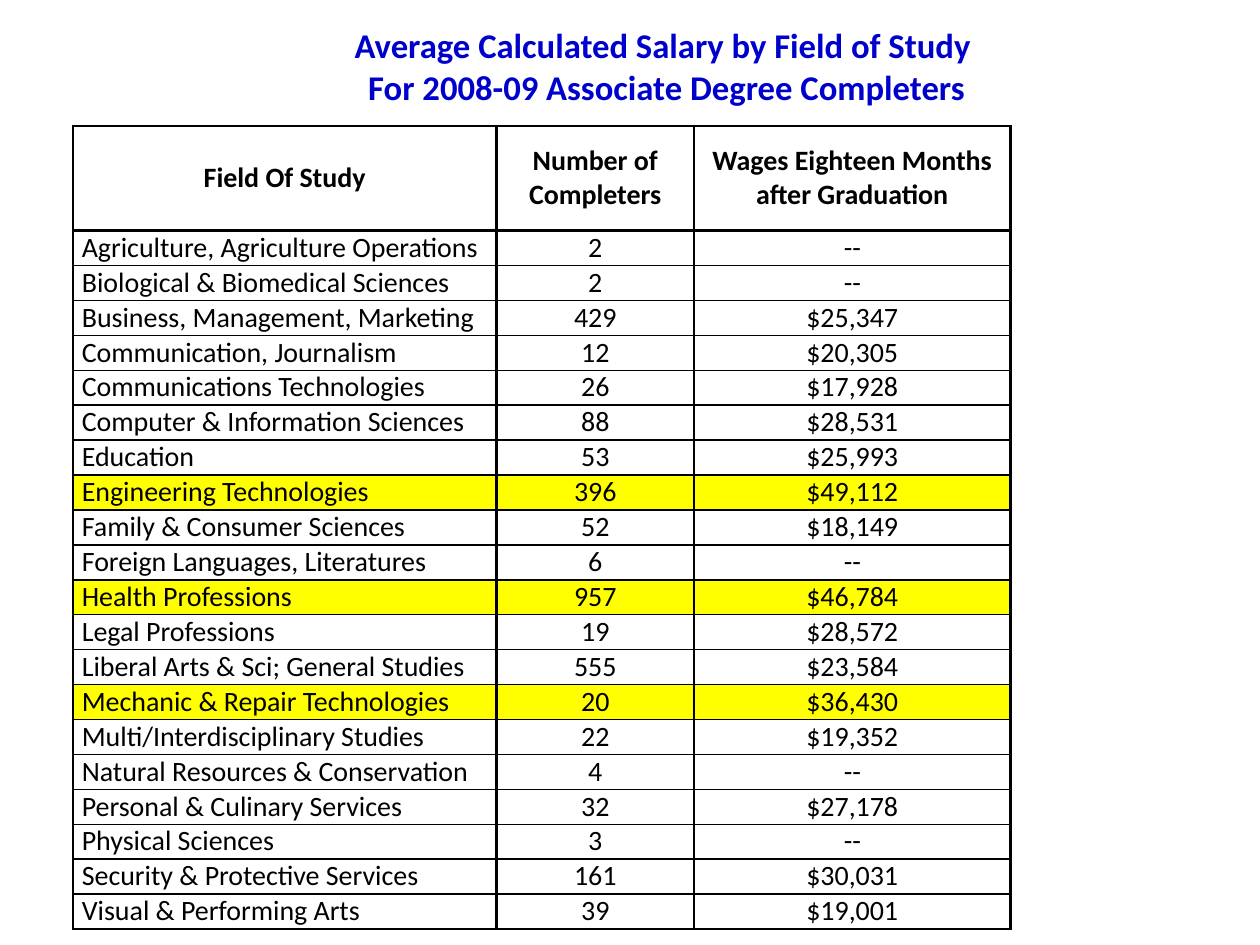
from dataclasses import dataclass

from lxml.etree import SubElement
from pptx import Presentation
from pptx.dml.color import RGBColor
from pptx.enum.text import MSO_ANCHOR as Anchor, PP_ALIGN as Align
from pptx.oxml.ns import qn
from pptx.slide import Slide
from pptx.table import _Cell as Cell
from pptx.text.text import TextFrame
from pptx.util import Inches, Pt


@dataclass(frozen=True)
class Theme:
    font: str = "Calibri"
    title_size: float = 19.8
    table_size: float = 16
    title_color: str = "0000CC"
    ink: str = "000000"
    highlight: str = "FFFF00"
    thick: float = 1.5
    thin: float = 1


@dataclass(frozen=True)
class Field:
    name: str
    completers: str
    wages: str = "--"
    highlighted: bool = False


THEME = Theme()
TITLE = "Average Calculated Salary by Field of Study \vFor 2008-09 Associate Degree Completers"
HEADERS = ("Field Of Study", "Number of Completers", "Wages Eighteen Months after Graduation")
COLUMN_WIDTHS = (3.36, 1.57, 2.51)
TABLE_HEIGHT = 6.38
HEADER_HEIGHT = 0.83
FIELDS = (
    Field("Agriculture, Agriculture Operations", "2"),
    Field("Biological & Biomedical Sciences", "2"),
    Field("Business, Management, Marketing", "429", "$25,347"),
    Field("Communication, Journalism", "12", "$20,305"),
    Field("Communications Technologies", "26", "$17,928"),
    Field("Computer & Information Sciences", "88", "$28,531"),
    Field("Education", "53", "$25,993"),
    Field("Engineering Technologies", "396", "$49,112", True),
    Field("Family & Consumer Sciences", "52", "$18,149"),
    Field("Foreign Languages, Literatures", "6"),
    Field("Health Professions", "957", "$46,784", True),
    Field("Legal Professions", "19", "$28,572"),
    Field("Liberal Arts & Sci; General Studies", "555", "$23,584"),
    Field("Mechanic & Repair Technologies", "20", "$36,430", True),
    Field("Multi/Interdisciplinary Studies", "22", "$19,352"),
    Field("Natural Resources & Conservation", "4"),
    Field("Personal & Culinary Services", "32", "$27,178"),
    Field("Physical Sciences", "3"),
    Field("Security & Protective Services", "161", "$30,031"),
    Field("Visual & Performing Arts", "39", "$19,001"),
)


def write_text(frame: TextFrame, text: str, *, size: float, color: str = THEME.ink,
               bold: bool = False, align: Align = Align.CENTER) -> None:
    frame.word_wrap = True
    paragraph = frame.paragraphs[0]
    paragraph.text = text
    paragraph.alignment = align
    for run in paragraph.runs:
        run.font.name = THEME.font
        run.font.size = Pt(size)
        run.font.bold = bold
        run.font.color.rgb = RGBColor.from_string(color)


def set_borders(cell: Cell, *, top: float, bottom: float) -> None:
    properties = cell._tc.get_or_add_tcPr()
    widths = {"L": THEME.thick, "R": THEME.thick, "T": top, "B": bottom}
    for side, width in widths.items():
        line = SubElement(properties, qn(f"a:ln{side}"), w=str(Pt(width)))
        SubElement(SubElement(line, qn("a:solidFill")), qn("a:srgbClr"), val=THEME.ink)


def format_cell(cell: Cell, text: str, *, top: float, bottom: float, bold: bool = False,
                align: Align = Align.CENTER, anchor: Anchor = Anchor.TOP,
                highlighted: bool = False) -> None:
    cell.margin_left = cell.margin_right = Inches(0.07)
    cell.margin_top = cell.margin_bottom = 0
    cell.vertical_anchor = anchor
    write_text(cell.text_frame, text, size=THEME.table_size, bold=bold, align=align)
    set_borders(cell, top=top, bottom=bottom)
    if highlighted:
        cell.fill.solid()
        cell.fill.fore_color.rgb = RGBColor.from_string(THEME.highlight)
    else:
        cell.fill.background()


def add_title(slide: Slide) -> None:
    title = slide.shapes.title
    title.left, title.top = Inches(0.75), Inches(0.17)
    title.width, title.height = Inches(9.08), Inches(1)
    frame = title.text_frame
    frame.margin_top, frame.margin_bottom = 0, Inches(0.3)
    frame.vertical_anchor = Anchor.MIDDLE
    write_text(frame, TITLE, size=THEME.title_size, color=THEME.title_color, bold=True)


def add_salary_table(slide: Slide) -> None:
    table = slide.shapes.add_table(
        len(FIELDS) + 1, len(HEADERS), Inches(0.58), Inches(1),
        Inches(sum(COLUMN_WIDTHS)), Inches(TABLE_HEIGHT)).table
    table.horz_banding = False
    for column, width in zip(table.columns, COLUMN_WIDTHS):
        column.width = Inches(width)

    table.rows[0].height = Inches(HEADER_HEIGHT)
    for cell, text in zip(table.rows[0].cells, HEADERS):
        format_cell(cell, text, top=THEME.thick, bottom=THEME.thick, bold=True,
                    anchor=Anchor.MIDDLE)

    row_height = Inches((TABLE_HEIGHT - HEADER_HEIGHT) / len(FIELDS))
    for index, field in enumerate(FIELDS, start=1):
        row = table.rows[index]
        row.height = row_height
        top = THEME.thick if index == 1 else THEME.thin
        bottom = THEME.thick if index == len(FIELDS) else THEME.thin
        texts = (field.name, field.completers, field.wages)
        for cell, text, align in zip(row.cells, texts, (Align.LEFT, Align.CENTER, Align.CENTER)):
            format_cell(cell, text, top=top, bottom=bottom, align=align,
                        highlighted=field.highlighted)


def main() -> None:
    presentation = Presentation()
    presentation.slide_width, presentation.slide_height = Inches(10), Inches(7.5)
    slide = presentation.slides.add_slide(presentation.slide_layouts[5])
    add_title(slide)
    add_salary_table(slide)
    presentation.save("out.pptx")


if __name__ == "__main__":
    main()
